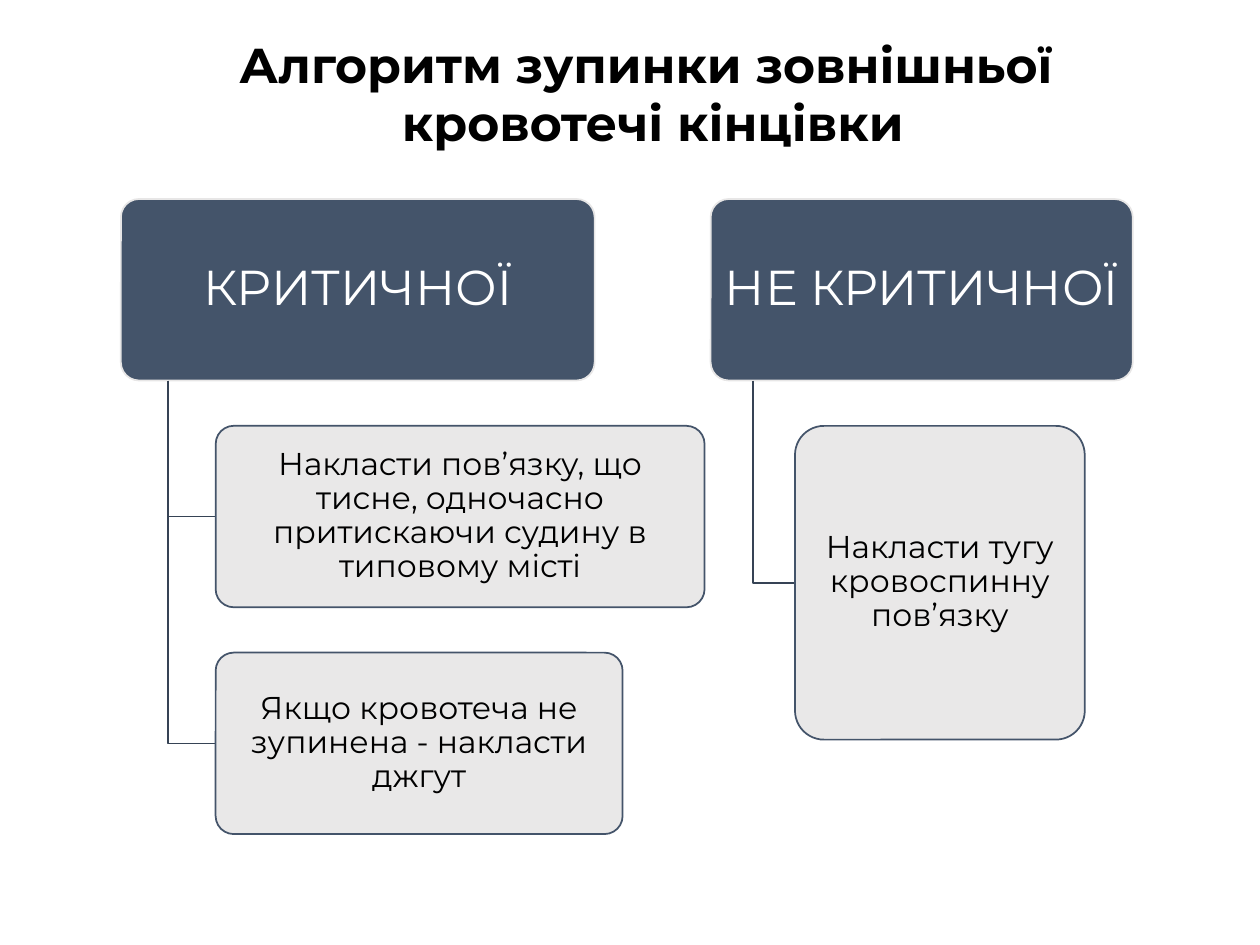
from lxml import etree
from pptx import Presentation
from pptx.dml.color import RGBColor
from pptx.enum.shapes import MSO_SHAPE
from pptx.enum.text import MSO_ANCHOR, MSO_AUTO_SIZE, PP_ALIGN
from pptx.oxml.ns import qn
from pptx.util import Inches, Pt

FONT = "Montserrat"
NAVY = RGBColor(0x44, 0x54, 0x6A)
DARK_NAVY = RGBColor(0x36, 0x43, 0x55)
PALE = RGBColor(0xE7, 0xE6, 0xE6)
BLACK = RGBColor(0, 0, 0)
WHITE = RGBColor(0xFF, 0xFF, 0xFF)

TOP = 1.58        # top of the heading cards
CARD_H = 1.44     # height of a regular card
GAP = 0.36        # vertical gap between cards


def add_run(p, text, size, color, bold=False):
    p.alignment = PP_ALIGN.CENTER
    r = p.add_run()
    r.text = text
    r.font.name, r.font.size, r.font.bold = FONT, Pt(size), bold
    r.font.color.rgb = color


def add_title(slide, left, top, width, height, lines):
    sp = slide.shapes.title
    sp.left, sp.top, sp.width, sp.height = map(Inches, (left, top, width, height))
    tf = sp.text_frame
    tf.word_wrap = False
    tf.auto_size = MSO_AUTO_SIZE.SHAPE_TO_FIT_TEXT
    tf.vertical_anchor = MSO_ANCHOR.TOP
    for i, line in enumerate(lines):
        p = tf.add_paragraph() if i else tf.paragraphs[0]
        add_run(p, line, 28, BLACK, bold=True)


def add_card(slide, left, top, width, height, text, heading=False):
    sp = slide.shapes.add_shape(MSO_SHAPE.ROUNDED_RECTANGLE,
                                *map(Inches, (left, top, width, height)))
    sp.adjustments[0] = 0.1
    sp.shadow.inherit = False
    sp.fill.solid()
    sp.fill.fore_color.rgb = NAVY if heading else PALE
    sp.line.color.rgb = PALE if heading else NAVY
    sp.line.width = Pt(1)
    if not heading:
        # Step cards are slightly transparent
        clr = sp.fill._xPr.find(qn("a:solidFill"))[0]
        etree.SubElement(clr, qn("a:alpha")).set("val", "90000")

    tf = sp.text_frame
    tf.word_wrap = True
    tf.vertical_anchor = MSO_ANCHOR.MIDDLE
    tf.margin_left = tf.margin_right = Inches(0.06 if heading else 0.04)
    tf.margin_top = tf.margin_bottom = Inches(0.04 if heading else 0.03)
    p = tf.paragraphs[0]
    p.line_spacing = 0.9
    add_run(p, text, 28 if heading else 18, WHITE if heading else BLACK)


def add_elbow(slide, x1, y1, x2, y2):
    builder = slide.shapes.build_freeform(Inches(x1), Inches(y1))
    builder.add_line_segments([(Inches(x1), Inches(y2)),
                               (Inches(x2), Inches(y2))], close=False)
    sp = builder.convert_to_shape()
    sp.shadow.inherit = False
    sp.fill.background()
    sp.line.color.rgb = DARK_NAVY
    sp.line.width = Pt(1)


def add_branch(slide, left, top, width, heading, steps):
    """Heading card with steps below; each step is (text, width, height)."""
    add_card(slide, left, top, width, CARD_H, heading, heading=True)
    trunk_x, step_x = left + width * 0.1, left + width * 0.2
    bottom = top + CARD_H
    y = bottom + GAP
    for text, step_w, step_h in steps:
        add_elbow(slide, trunk_x, bottom, step_x, y + step_h / 2)
        add_card(slide, step_x, y, step_w, step_h, text)
        y += step_h + GAP


def main():
    prs = Presentation()
    prs.slide_width, prs.slide_height = Inches(10), Inches(7.5)
    slide = prs.slides.add_slide(prs.slide_layouts[5])

    add_title(slide, 1.66, 0.22, 7.04, 1.04,
              ["Алгоритм зупинки зовнішньої ", "кровотечі кінцівки"])

    # Critical bleeding
    add_branch(slide, 0.96, TOP, 3.76, "КРИТИЧНОЇ", [
        ("Накласти пов’язку, що тисне, одночасно притискаючи судину "
         "в типовому місті", 3.88, CARD_H),
        ("Якщо кровотеча не зупинена - накласти джгут", 3.23, CARD_H),
    ])

    # Non-critical bleeding
    add_branch(slide, 5.64, TOP, 3.35, "НЕ КРИТИЧНОЇ", [
        ("Накласти тугу кровоспинну пов’язку", 2.3, 2.49),
    ])

    prs.save("out.pptx")


if __name__ == "__main__":
    main()
